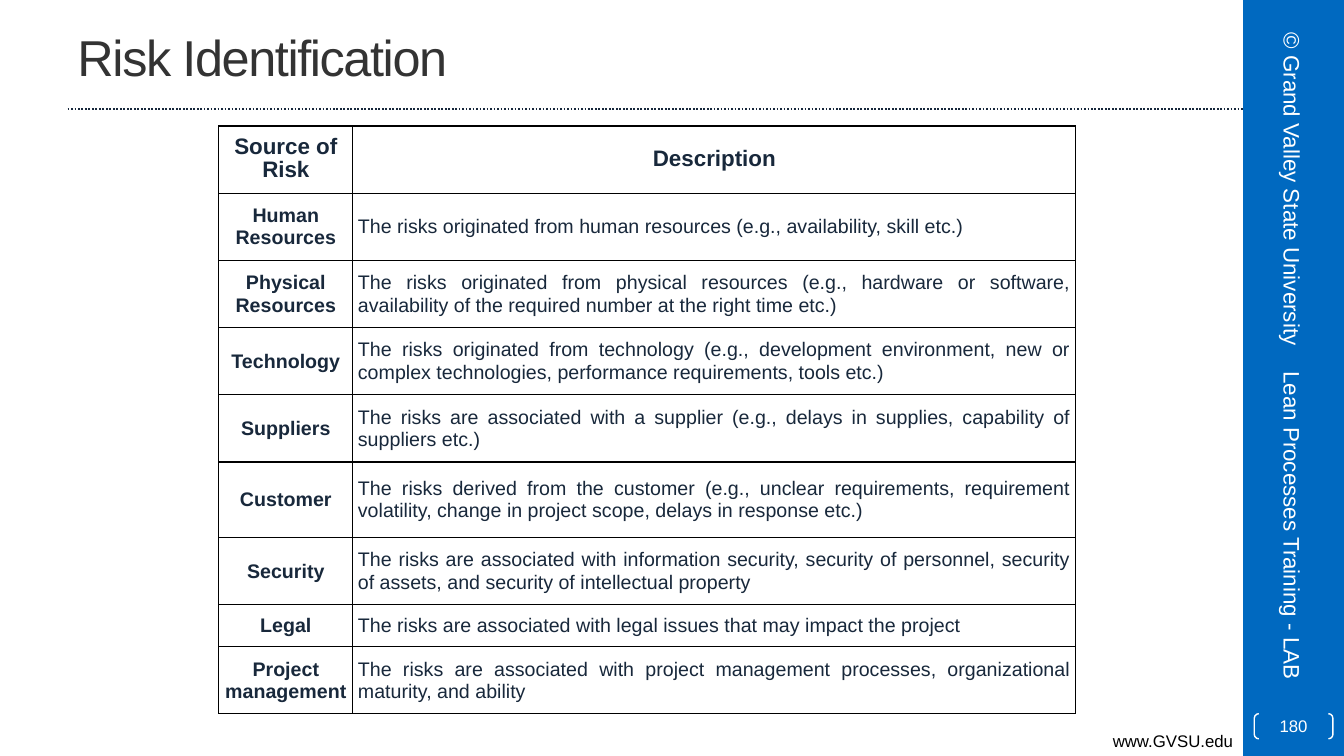
from lxml import etree
from pptx import Presentation
from pptx.dml.color import RGBColor
from pptx.enum import dml, shapes, text
from pptx.oxml import ns
from pptx.util import Inches, Pt

THEME = {
    "font": "Arial",
    "bar": RGBColor.from_string("0069C0"),
    "rule": RGBColor.from_string("17273B"),
    "title": RGBColor.from_string("333333"),
    "body": RGBColor.from_string("18283B"),
    "black": RGBColor.from_string("000000"),
    "white": RGBColor.from_string("FFFFFF"),
    "title_size": Pt(36),
    "heading_size": Pt(16),
    "body_size": Pt(14),
    "small_size": Pt(12),
}
ALIGN = text.PP_ALIGN
MIDDLE = text.MSO_ANCHOR.MIDDLE

RISKS = [
    ("Source of Risk", "Description"),
    ("Human Resources",
     "The risks originated from human resources (e.g., availability, skill etc.)"),
    ("Physical Resources",
     "The risks originated from physical resources (e.g., hardware or software, "
     "availability of the required number at the right time etc.)"),
    ("Technology",
     "The risks originated from technology (e.g., development environment, new or "
     "complex technologies, performance requirements, tools etc.)"),
    ("Suppliers",
     "The risks are associated with a supplier (e.g., delays in supplies, "
     "capability of suppliers etc.)"),
    ("Customer",
     "The risks derived from the customer (e.g., unclear requirements, requirement "
     "volatility, change in project scope, delays in response etc.)"),
    ("Security",
     "The risks are associated with information security, security of personnel, "
     "security of assets, and security of intellectual property"),
    ("Legal",
     "The risks are associated with legal issues that may impact the project"),
    ("Project management",
     "The risks are associated with project management processes, organizational "
     "maturity, and ability"),
]
ROW_HEIGHTS = {"Customer": 0.75, "Legal": 5 / 12}  # all other rows are 2/3 inch


def write(frame, words, size, color, align=ALIGN.LEFT, bold=False):
    """Put one formatted paragraph in a text frame and return the paragraph."""
    frame.word_wrap = True
    paragraph = frame.paragraphs[0]
    paragraph.alignment = align
    run = paragraph.add_run()
    run.text = words
    formats = {"name": THEME["font"], "size": THEME[size], "bold": bold}
    for name, value in formats.items():
        setattr(run.font, name, value)
    run.font.color.rgb = THEME[color]
    return paragraph


def add_cell_borders(cell):
    properties = cell._tc.get_or_add_tcPr()
    for position, side in enumerate(("lnL", "lnR", "lnT", "lnB")):
        line = etree.Element(ns.qn(f"a:{side}"), w=str(Pt(1)))
        fill = etree.SubElement(line, ns.qn("a:solidFill"))
        etree.SubElement(fill, ns.qn("a:srgbClr"), val=str(THEME["black"]))
        properties.insert(position, line)


presentation = Presentation()
presentation.slide_width = Inches(13.33)
presentation.slide_height = Inches(7.5)
slide = presentation.slides.add_slide(presentation.slide_layouts[6])

# Side bar and rule under the title
side_bar = slide.shapes.add_shape(
    shapes.MSO_SHAPE.RECTANGLE, Inches(12.33), 0, Inches(1), Inches(7.5))
side_bar.shadow.inherit = False
side_bar.fill.solid()
side_bar.fill.fore_color.rgb = THEME["bar"]
side_bar.line.fill.background()

rule = slide.shapes.add_connector(
    shapes.MSO_CONNECTOR.STRAIGHT,
    Inches(0.67), Inches(1.08), Inches(12.33), Inches(1.08))
rule.line.color.rgb = THEME["rule"]
rule.line.width = Pt(1.25)
rule.line.dash_style = dml.MSO_LINE.ROUND_DOT
etree.SubElement(rule._element.spPr, ns.qn("a:effectLst"))

# Title, web address and side labels
LABELS = [
    ("www.GVSU.edu", (0, 7.2, 12.33, 0.3), 0, "small_size", "black", ALIGN.RIGHT),
    ("Risk Identification", (0.67, 0.03, 11.11, 1.05), 0,
     "title_size", "title", ALIGN.LEFT),
    ("Lean Processes Training - LAB", (11.11, 5.03, 3.42, 0.53), 90,
     "heading_size", "white", ALIGN.LEFT),
    ("© Grand Valley State University", (11.11, 1.61, 3.42, 0.53), 90,
     "heading_size", "white", ALIGN.CENTER),
]
for words, box, rotation, size, color, align in LABELS:
    label = slide.shapes.add_textbox(*map(Inches, box))
    label.rotation = rotation
    is_address = size == "small_size"
    label.text_frame.vertical_anchor = text.MSO_ANCHOR.TOP if is_address else MIDDLE
    paragraph = write(label.text_frame, words, size, color, align)
    if size == "title_size":
        paragraph.runs[0].font._element.set("spc", "-100")

# Risk table
table = slide.shapes.add_table(
    len(RISKS), 2, Inches(2.17), Inches(1.25), Inches(8.5), Inches(5.83)).table
table.first_row = False
table.horz_banding = False
for column, width in zip(table.columns, (1.33, 7.17)):
    column.width = Inches(width)

CELL_FORMAT = {
    "margin_left": Inches(0.05), "margin_right": Inches(0.05),
    "margin_top": 0, "margin_bottom": 0, "vertical_anchor": MIDDLE,
}
for row_index, risk in enumerate(RISKS):
    table.rows[row_index].height = Inches(ROW_HEIGHTS.get(risk[0], 2 / 3))
    for column_index, words in enumerate(risk):
        cell = table.cell(row_index, column_index)
        for name, value in CELL_FORMAT.items():
            setattr(cell, name, value)
        cell.fill.background()
        add_cell_borders(cell)
        is_heading = row_index == 0 or column_index == 0
        paragraph = write(
            cell.text_frame, words,
            "heading_size" if row_index == 0 else "body_size", "body",
            ALIGN.CENTER if is_heading else ALIGN.JUSTIFY, is_heading)
        paragraph.line_spacing = Pt(16)

# Slide number
page_number = slide.shapes.add_shape(
    shapes.MSO_SHAPE.DOUBLE_BRACKET,
    Inches(12.44), Inches(7.08), Inches(0.78), Inches(0.25))
page_number.adjustments[0] = 0.18
page_number.shadow.inherit = False
page_number.fill.background()
page_number.line.color.rgb = THEME["white"]
page_number.line.width = Pt(1)
frame = page_number.text_frame
for side in ("left", "right", "top", "bottom"):
    setattr(frame, f"margin_{side}", 0)
frame.vertical_anchor = MIDDLE
write(frame, "180", "small_size", "white", ALIGN.CENTER)

presentation.save("out.pptx")
